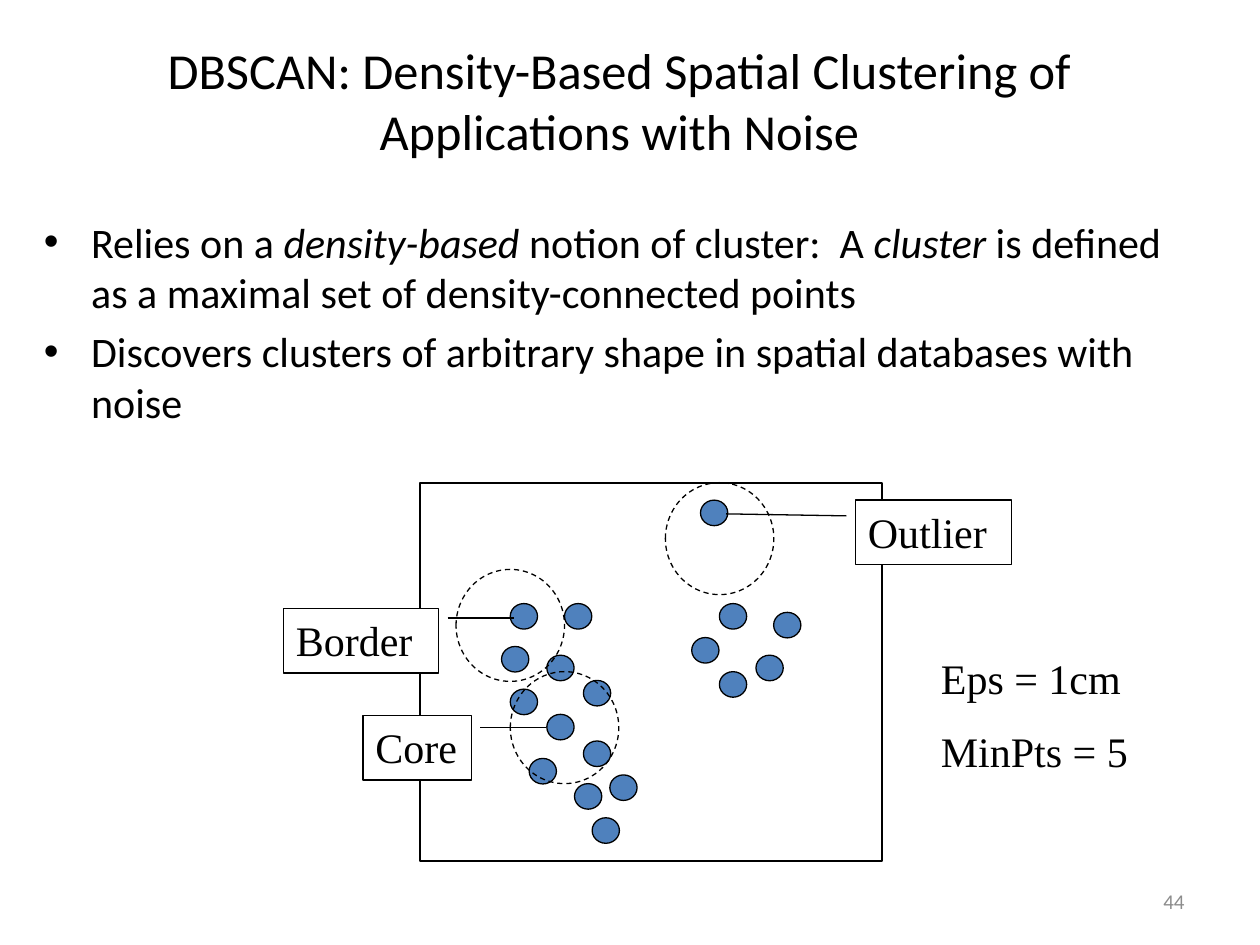
"""Build the DBSCAN slide with its cluster diagram."""
from lxml.etree import SubElement
from pptx import Presentation
from pptx.dml.color import RGBColor
from pptx.enum.dml import MSO_LINE
from pptx.enum.shapes import MSO_SHAPE
from pptx.enum.text import MSO_ANCHOR, PP_ALIGN
from pptx.oxml.ns import qn
from pptx.util import Pt

DOTS = [
    (291.6, 344.9), (286.6, 369.4), (312.5, 374.4), (322.6, 344.9),
    (333.4, 388.8), (291.6, 393.8), (312.5, 408.2), (302.4, 433.4),
    (328.3, 447.8), (338.4, 467.3), (333.4, 423.4), (348.5, 442.8),
    (400.3, 285.8), (411.1, 344.9), (395.3, 364.3), (432, 374.4),
    (442.1, 349.9), (411.1, 383.8),
]
NEIGHBOURHOODS = [(260.6, 325.4), (291.6, 383.8), (380.2, 275.8)]
CALLOUTS = [
    ("Core", 207.4, 409, 61.9, (0.188, 1.083, 0.188, 1.688)),
    ("Border", 162, 347.8, 88.6, (0.145, 1.059, 0.145, 1.485)),
    ("Outlier", 488.9, 285.8, 89.3, (0.245, -0.058, 0.214, -0.828)),
]
BULLETS = [
    [("Relies on a ", False), ("density-based", True),
     (" notion of cluster:  A ", False), ("cluster", True),
     (" is defined as a maximal set of density-connected points", False)],
    [("Discovers clusters of arbitrary shape in spatial databases with noise", False)],
]


def color(value):
    """Turn a hex string into a colour."""
    return RGBColor.from_string(value)


class SlideBuilder:
    """Hold the style and the current slide."""

    sans, serif = "Calibri", "Times New Roman"
    ink, dot_fill, paper, muted = "000000", "4F81BD", "FFFFFF", "8C8C8C"

    def __init__(self, slide):
        """Start on the given slide."""
        self.slide = slide

    def run(self, paragraph, text, size, font, ink=ink, italic=False):
        """Add one formatted run."""
        run = paragraph.add_run()
        run.text = text
        run.font.size, run.font.name = Pt(size), font
        run.font.italic = italic
        run.font.color.rgb = color(ink)

    def title(self, text, box):
        """Place and fill the title placeholder."""
        title = self.slide.shapes.title
        title.left, title.top, title.width, title.height = map(Pt, box)
        title.text_frame.vertical_anchor = MSO_ANCHOR.MIDDLE
        paragraph = title.text_frame.paragraphs[0]
        paragraph.alignment = PP_ALIGN.CENTER
        self.run(paragraph, text, 28.8, self.sans)

    def text(self, paragraphs, box, font, size=24, gap=0, ink=ink, bullet=False,
             align=PP_ALIGN.LEFT, anchor=MSO_ANCHOR.TOP):
        """Add a text box whose paragraphs are lists of (text, italic)."""
        frame = self.slide.shapes.add_textbox(*map(Pt, box)).text_frame
        frame.word_wrap = True
        frame.vertical_anchor = anchor
        for index, runs in enumerate(paragraphs):
            paragraph = frame.add_paragraph() if index else frame.paragraphs[0]
            paragraph.alignment = align
            paragraph.space_before = Pt(gap)
            if bullet:
                self.bullet(paragraph)
            for words, italic in runs:
                self.run(paragraph, words, size, font, ink, italic)

    def bullet(self, paragraph):
        """Give a paragraph a hanging bullet."""
        properties = paragraph._p.get_or_add_pPr()
        properties.set("marL", str(Pt(27)))
        properties.set("indent", str(-Pt(27)))
        SubElement(properties, qn("a:buFont"), typeface="Arial")
        SubElement(properties, qn("a:buChar"), char="•")

    def shape(self, kind, box, fill=None, dashed=False):
        """Add a thinly outlined preset shape."""
        shape = self.slide.shapes.add_shape(kind, *map(Pt, box))
        shape.shadow.inherit = False
        if fill:
            shape.fill.solid()
            shape.fill.fore_color.rgb = color(fill)
        else:
            shape.fill.background()
        shape.line.color.rgb = color(self.ink)
        shape.line.width = Pt(0.75)
        if dashed:
            shape.line.dash_style = MSO_LINE.DASH
        return shape

    def callout(self, label, left, top, width, leader):
        """Add a labelled box with a leader line."""
        callout = self.shape(MSO_SHAPE.LINE_CALLOUT_1, (left, top, width, 36.7), self.paper)
        for index, value in enumerate(leader):
            callout.adjustments[index] = value
        callout.text_frame.vertical_anchor = MSO_ANCHOR.TOP
        paragraph = callout.text_frame.paragraphs[0]
        paragraph.alignment = PP_ALIGN.LEFT
        self.run(paragraph, label, 24, self.serif)


def main():
    """Build and save the slide."""
    deck = Presentation()
    deck.slide_width, deck.slide_height = Pt(720), Pt(540)
    page = SlideBuilder(deck.slides.add_slide(deck.slide_layouts[5]))
    page.title("DBSCAN: Density-Based Spatial Clustering of Applications with Noise",
               (18, 18, 672, 78))
    page.text(BULLETS, (18, 120, 672, 396), page.sans, gap=5, bullet=True)
    page.text([[("44", False)]], (516, 500.5, 168, 28.8), page.sans, size=12,
              ink=page.muted, align=PP_ALIGN.RIGHT, anchor=MSO_ANCHOR.MIDDLE)
    for left, top in DOTS:
        page.shape(MSO_SHAPE.OVAL, (left, top, 15.6, 14.6), page.dot_fill)
    page.shape(MSO_SHAPE.RECTANGLE, (240, 276, 264, 216))
    for left, top in NEIGHBOURHOODS:
        page.shape(MSO_SHAPE.OVAL, (left, top, 62, 64), dashed=True)
    for callout in CALLOUTS:
        page.callout(*callout)
    page.text([[("Eps = 1cm", False)], [("MinPts = 5", False)]],
              (530.6, 369.4, 129.6, 79.2), page.serif, gap=13)
    deck.save("out.pptx")


if __name__ == "__main__":
    main()
